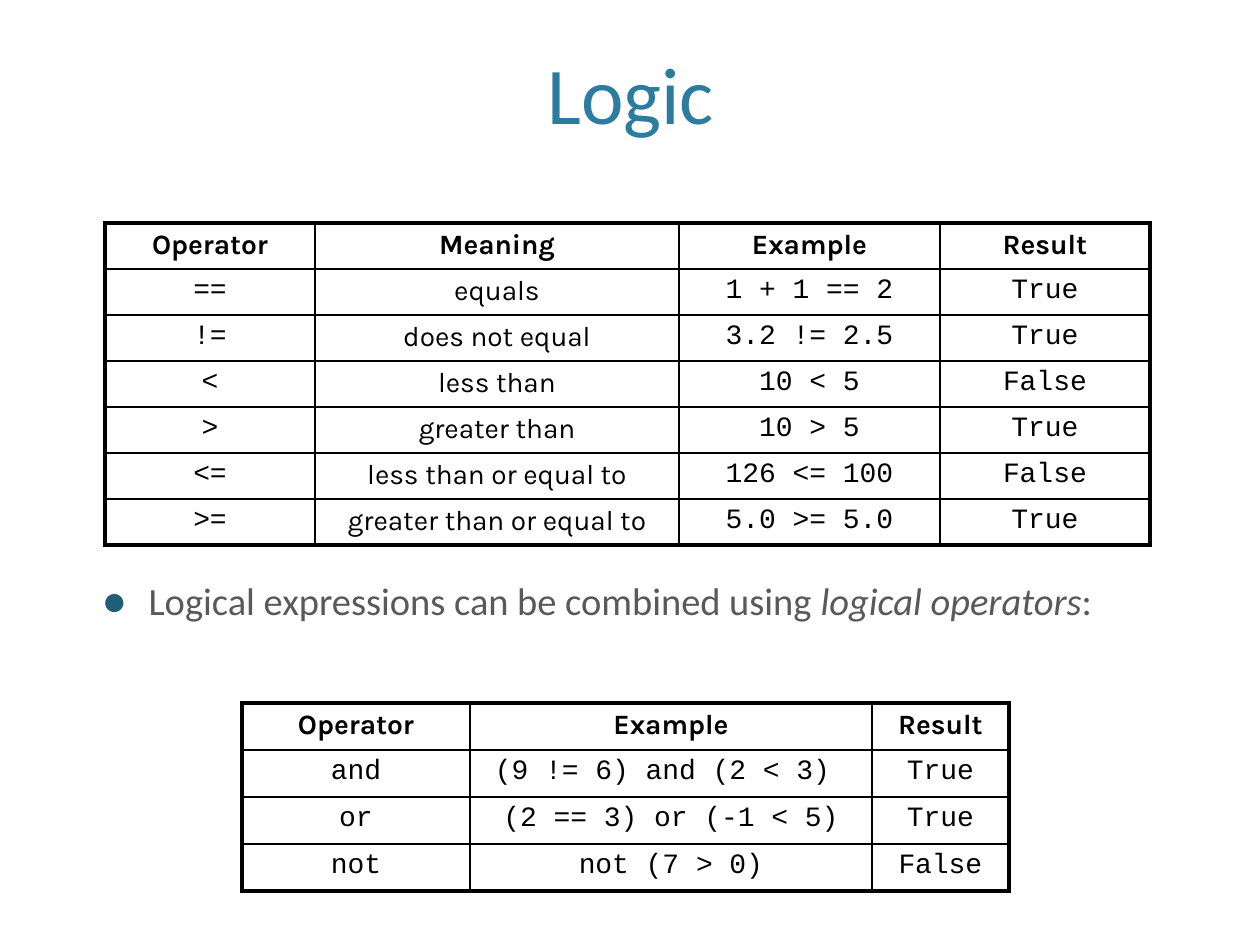
from dataclasses import dataclass

from lxml import etree
from pptx import Presentation
from pptx.dml.color import RGBColor
from pptx.enum import text
from pptx.oxml import ns
from pptx.util import Emu, Pt

PX = 914400 / 126
BLACK, GREY, TEAL, NAVY = "000000", "595959", "2C7C9F", "215D77"
SANS, MONO, BODY = "Karla", "Courier New", "Calibri"
THIN, THICK = Pt(1), Pt(2.25)


@dataclass
class Grid:
    left: int
    top: int
    row_height: int
    columns: list[tuple[str, int, str]]
    rows: list[tuple[str, ...]]


def px(n: int) -> Emu:
    return Emu(round(n * PX))


def rgb(color: str) -> RGBColor:
    return RGBColor.from_string(color)


def add_xml(parent, tag: str, **attrs):
    return etree.SubElement(parent, ns.qn(tag), attrs)


def format_run(r, font: str, size: int, color: str, bold=False, italic=False) -> None:
    r.font.name = font
    r.font.size = Pt(size)
    r.font.color.rgb = rgb(color)
    r.font.bold = bold
    r.font.italic = italic


def place(sp, left: int, top: int, width: int, height: int) -> None:
    sp.left, sp.top, sp.width, sp.height = map(px, (left, top, width, height))


def add_borders(cell, outer_sides: dict[str, bool]) -> None:
    tc_pr = cell._tc.get_or_add_tcPr()
    for side, outer in outer_sides.items():
        ln = add_xml(tc_pr, f"a:ln{side}", w=str(THICK if outer else THIN))
        fill = add_xml(ln, "a:solidFill")
        add_xml(fill, "a:srgbClr", val=BLACK)


def draw_grid(slide, grid: Grid) -> None:
    names, widths, fonts = zip(*grid.columns)
    lines = [names, *grid.rows]
    frame = slide.shapes.add_table(
        len(lines), len(names), px(grid.left), px(grid.top),
        px(sum(widths)), px(grid.row_height * len(lines)))
    table = frame.table
    table.first_row = table.horz_banding = False
    for column, width in zip(table.columns, widths):
        column.width = px(width)
    for i, line in enumerate(lines):
        table.rows[i].height = px(grid.row_height)
        for j, value in enumerate(line):
            cell = table.cell(i, j)
            add_borders(cell, {"L": j == 0, "R": j == len(names) - 1,
                               "T": i == 0, "B": i == len(lines) - 1})
            cell.fill.background()
            p = cell.text_frame.paragraphs[0]
            p.text = value
            p.alignment = text.PP_ALIGN.CENTER
            before = add_xml(p._p.get_or_add_pPr(), "a:spcBef")
            add_xml(before, "a:spcPct", val="20000")
            format_run(p.runs[0], SANS if i == 0 else fonts[j], 16, BLACK, bold=i == 0)


def draw_title(sp, title: str) -> None:
    place(sp, 76, 34, 1109, 113)
    tf = sp.text_frame
    tf.text = title
    tf.vertical_anchor = text.MSO_ANCHOR.BOTTOM
    tf.auto_size = text.MSO_AUTO_SIZE.NONE
    p = tf.paragraphs[0]
    p.alignment = text.PP_ALIGN.CENTER
    format_run(p.runs[0], BODY, 46, TEAL)


def draw_bullet(sp, parts: list[tuple[str, bool]]) -> None:
    place(sp, 42, 571, 1109, 132)
    tf = sp.text_frame
    tf.auto_size = text.MSO_AUTO_SIZE.NONE
    p = tf.paragraphs[0]
    p.level = 1
    p.space_before = Pt(6)
    for words, italic in parts:
        r = p.add_run()
        r.text = words
        format_run(r, BODY, 22, GREY, italic=italic)
    p_pr = p._p.get_or_add_pPr()
    p_pr.set("marL", str(px(94)))
    p_pr.set("indent", str(px(-47)))
    add_xml(add_xml(p_pr, "a:buClr"), "a:srgbClr", val=NAVY)
    add_xml(p_pr, "a:buSzPct", val="110000")
    add_xml(p_pr, "a:buChar", char="●")


COMPARISONS = Grid(
    105, 223, 46,
    [("Operator", 210, MONO), ("Meaning", 364, SANS),
     ("Example", 261, MONO), ("Result", 210, MONO)],
    [("==", "equals", "1 + 1 == 2", "True"),
     ("!=", "does not equal", "3.2 != 2.5", "True"),
     ("<", "less than", "10 < 5", "False"),
     (">", "greater than", "10 > 5", "True"),
     ("<=", "less than or equal to", "126 <= 100", "False"),
     (">=", "greater than or equal to", "5.0 >= 5.0", "True")])

LOGICAL_OPERATORS = Grid(
    242, 703, 47,
    [("Operator", 228, MONO), ("Example", 402, MONO), ("Result", 137, MONO)],
    [("and", "(9 != 6) and (2 < 3) ", "True"),
     ("or", "(2 == 3) or (-1 < 5)", "True"),
     ("not", "not (7 > 0)", "False")])


def main() -> None:
    prs = Presentation()
    prs.slide_width, prs.slide_height = px(1260), px(945)
    slide = prs.slides.add_slide(prs.slide_layouts[1])
    draw_title(slide.shapes.title, "Logic")
    draw_bullet(slide.placeholders[1], [
        ("Logical expressions can be combined using ", False),
        ("logical operators", True),
        (":", False)])
    for grid in (LOGICAL_OPERATORS, COMPARISONS):
        draw_grid(slide, grid)
    prs.save("out.pptx")


if __name__ == "__main__":
    main()
